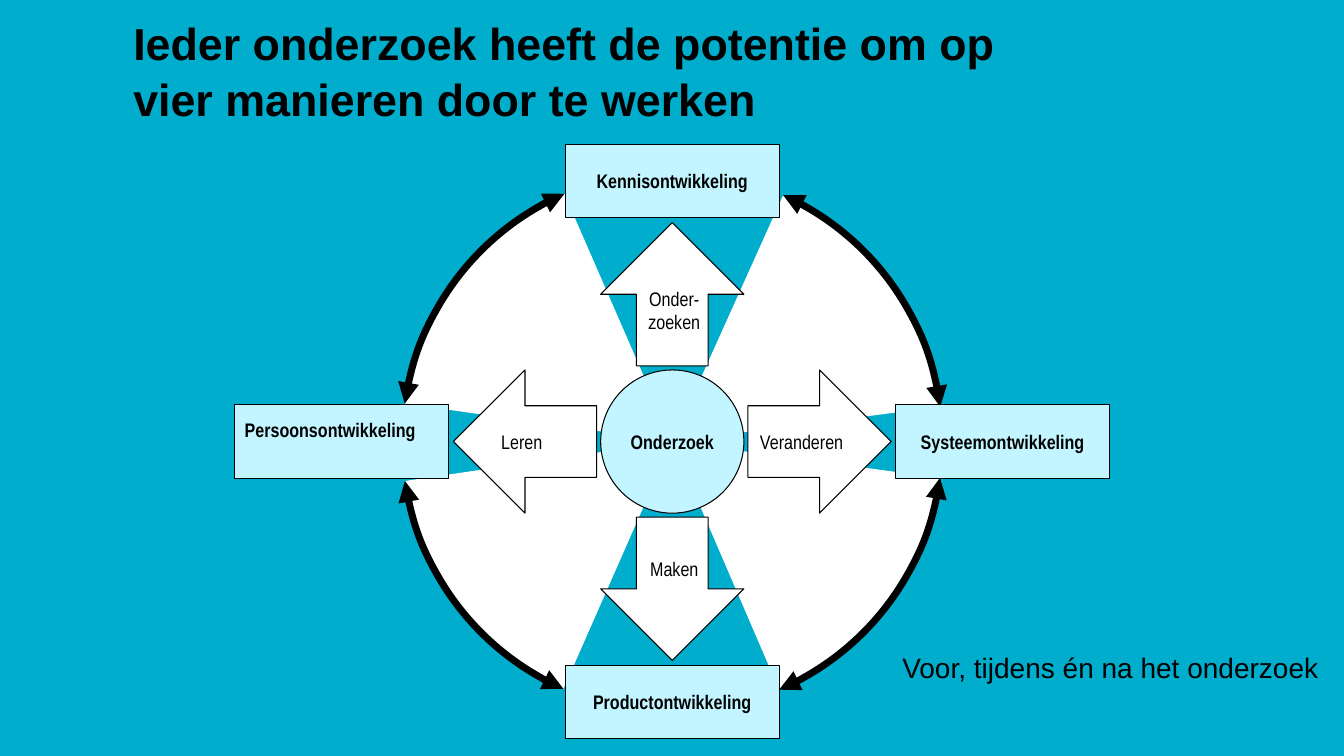
from lxml.etree import SubElement
from pptx import Presentation
from pptx.dml.color import RGBColor
from pptx.enum.shapes import MSO_SHAPE
from pptx.enum.text import MSO_ANCHOR, MSO_AUTO_SIZE, PP_ALIGN
from pptx.oxml.ns import qn
from pptx.util import Pt

BLACK, WHITE, PALE_BLUE = "000000", "FFFFFF", "C2F5FF"
CENTER_X, CENTER_Y = 480.2, 315.4
WHEEL_SIZE, HUB_SIZE = 386, 102.3
BOX_WIDTH, BOX_HEIGHT = 153, 52.6
ARROW_REACH = 105.2
BOX_REACH_X, BOX_REACH_Y = 236, 186


def set_text(shape, text, font_format, align=PP_ALIGN.CENTER, **frame_format):
    frame = shape.text_frame
    frame.text = text
    for name, value in frame_format.items():
        setattr(frame, name, value)
    paragraph = frame.paragraphs[0]
    paragraph.alignment = align
    for name, value in font_format.items():
        setattr(paragraph.font, name, value)
    paragraph.font.color.rgb = RGBColor.from_string(BLACK)
    return paragraph


def add_centered(kind, offset_x, offset_y, width, height, fill, line_width=0.75):
    left = CENTER_X + offset_x - width / 2
    top = CENTER_Y + offset_y - height / 2
    shape = slide.shapes.add_shape(kind, Pt(left), Pt(top), Pt(width), Pt(height))
    shape.shadow.inherit = False
    shape.fill.solid()
    shape.fill.fore_color.rgb = RGBColor.from_string(fill)
    shape.line.color.rgb = RGBColor.from_string(BLACK)
    shape.line.width = Pt(line_width)
    return shape


presentation = Presentation()
presentation.slide_width, presentation.slide_height = Pt(960), Pt(540)
slide = presentation.slides.add_slide(presentation.slide_layouts[5])
slide.background.fill.solid()
slide.background.fill.fore_color.rgb = RGBColor.from_string("00ADCD")

# Title
title = slide.shapes.title
title.left, title.top, title.width, title.height = Pt(88), Pt(8.6), Pt(648), Pt(85)
paragraph = set_text(
    title, "Ieder onderzoek heeft de potentie om op vier manieren door te werken",
    {"name": "Arial", "size": Pt(32), "bold": True}, PP_ALIGN.LEFT,
    vertical_anchor=MSO_ANCHOR.BOTTOM, word_wrap=True, auto_size=MSO_AUTO_SIZE.NONE)
paragraph.line_spacing = 1.05

# Wheel: white sectors with double-headed arcs, angles in degrees
for start, end in [(294.24, 352.61), (188.09, 246.46), (113.75, 171.61), (7.74, 66.7)]:
    arc = add_centered(MSO_SHAPE.ARC, 0, 0, WHEEL_SIZE, WHEEL_SIZE, WHITE, 5)
    arc.adjustments[0], arc.adjustments[1] = start * 0.6, end * 0.6
    for tag in ("a:headEnd", "a:tailEnd"):
        SubElement(arc.line._get_or_add_ln(), qn(tag), type="triangle")

# Hub
label_font = {"name": "Arial Narrow", "size": Pt(14), "bold": True}
arrow_font = {**label_font, "bold": False}
narrow_margins = {f"margin_{side}": Pt(2.9) for side in ("left", "top", "right", "bottom")}
upright_margins = {**narrow_margins, "margin_top": 0, "margin_right": 0}
middle = {"vertical_anchor": MSO_ANCHOR.MIDDLE, "word_wrap": True}
hub = add_centered(MSO_SHAPE.OVAL, 0, 0, HUB_SIZE, HUB_SIZE, PALE_BLUE)
set_text(hub, "Onderzoek", label_font, **middle, **narrow_margins)

# Four directions: an arrow and the development it leads to
directions = [
    (0, -1, MSO_SHAPE.UP_ARROW, "Onder-zoeken", upright_margins,
     "Kennisontwikkeling", PP_ALIGN.CENTER, {}),
    (1, 0, MSO_SHAPE.RIGHT_ARROW, "Veranderen", narrow_margins,
     "Systeemontwikkeling", PP_ALIGN.CENTER, {}),
    (0, 1, MSO_SHAPE.DOWN_ARROW, "Maken", upright_margins,
     "Productontwikkeling", PP_ALIGN.CENTER, {}),
    (-1, 0, MSO_SHAPE.LEFT_ARROW, "Leren", {**narrow_margins, "margin_right": Pt(33)},
     "Persoonsontwikkeling", PP_ALIGN.LEFT, {"margin_bottom": Pt(20)}),
]
for x, y, kind, action, arrow_margins, result, align, box_margins in directions:
    box = add_centered(MSO_SHAPE.RECTANGLE, x * BOX_REACH_X, y * BOX_REACH_Y,
                       BOX_WIDTH, BOX_HEIGHT, PALE_BLUE)
    set_text(box, result, label_font, align, **middle, **box_margins)
    arrow = add_centered(kind, x * ARROW_REACH, y * ARROW_REACH, HUB_SIZE, HUB_SIZE, WHITE)
    set_text(arrow, action, arrow_font, **middle, **arrow_margins)

# Side note
note = slide.shapes.add_textbox(Pt(637.4), Pt(460.8), Pt(319.6), Pt(31.5))
set_text(note, "Voor, tijdens én na het onderzoek", {"name": "Arial", "size": Pt(20)},
         PP_ALIGN.LEFT, word_wrap=False, auto_size=MSO_AUTO_SIZE.SHAPE_TO_FIT_TEXT)

presentation.save("out.pptx")
